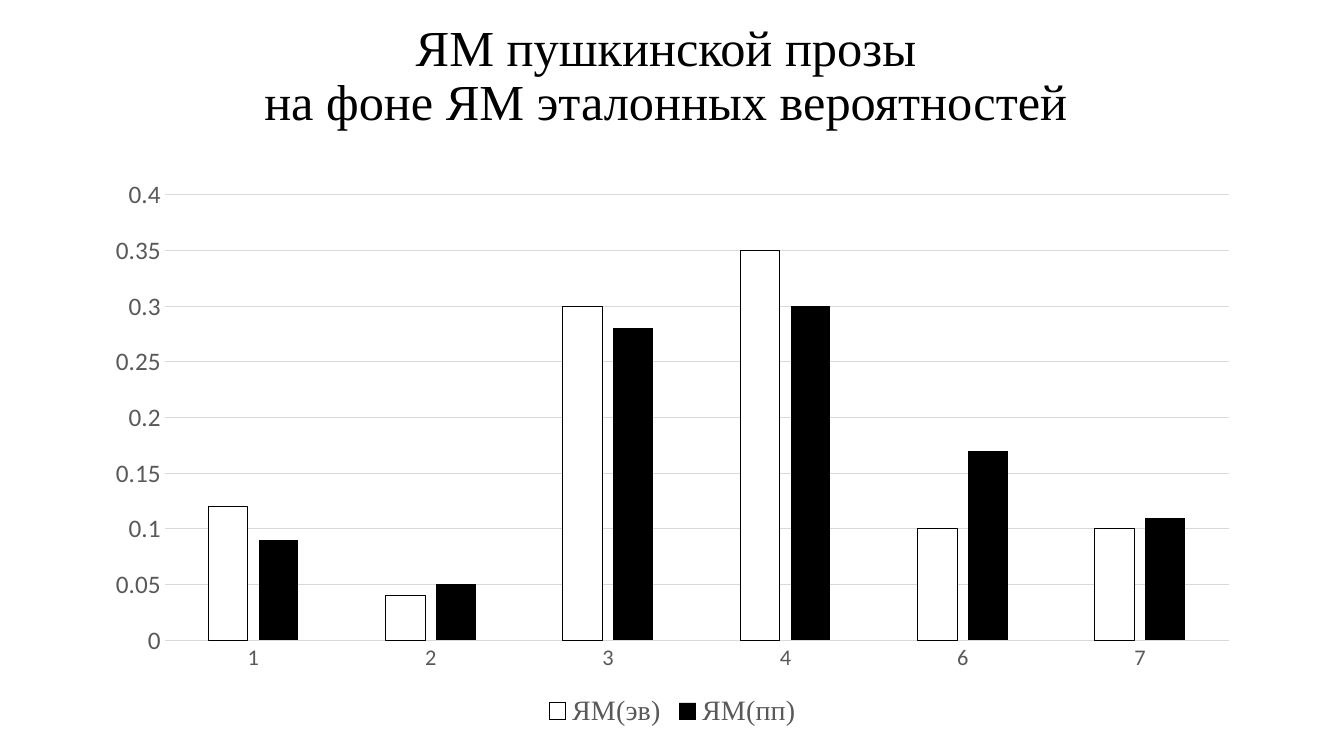
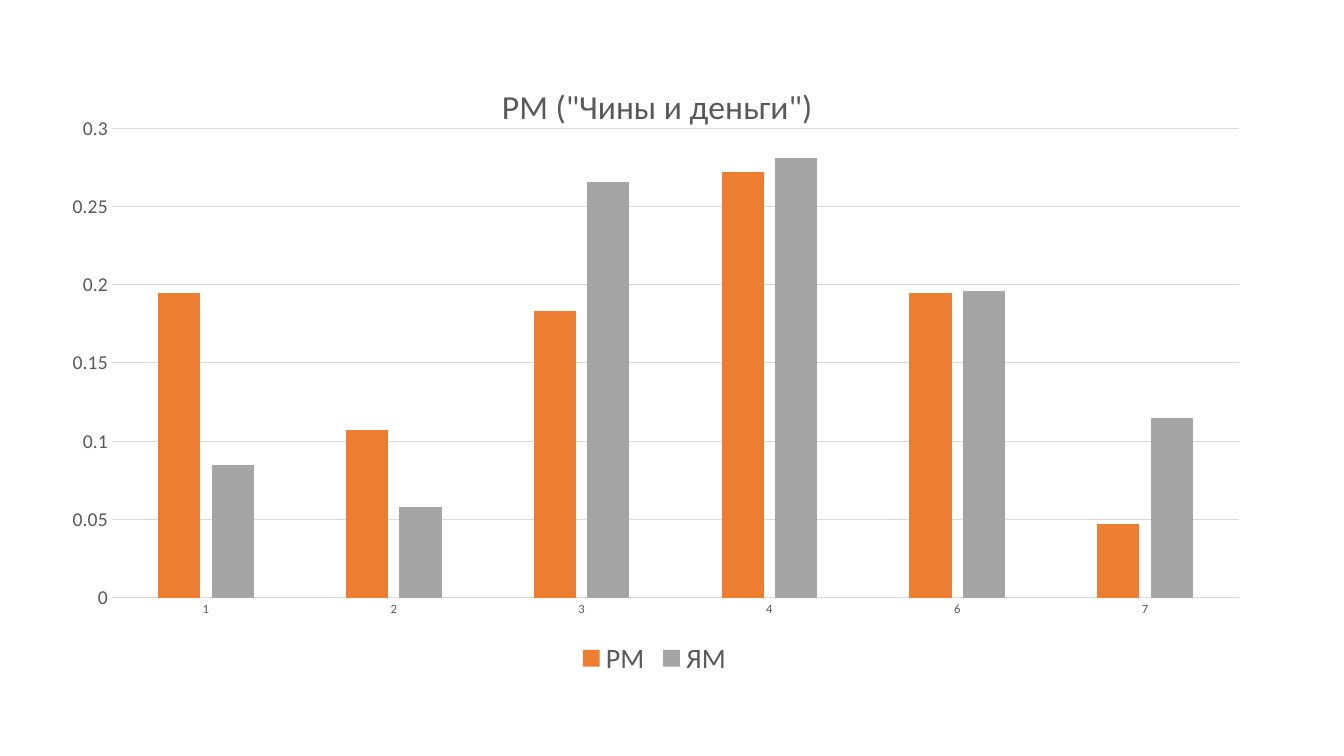
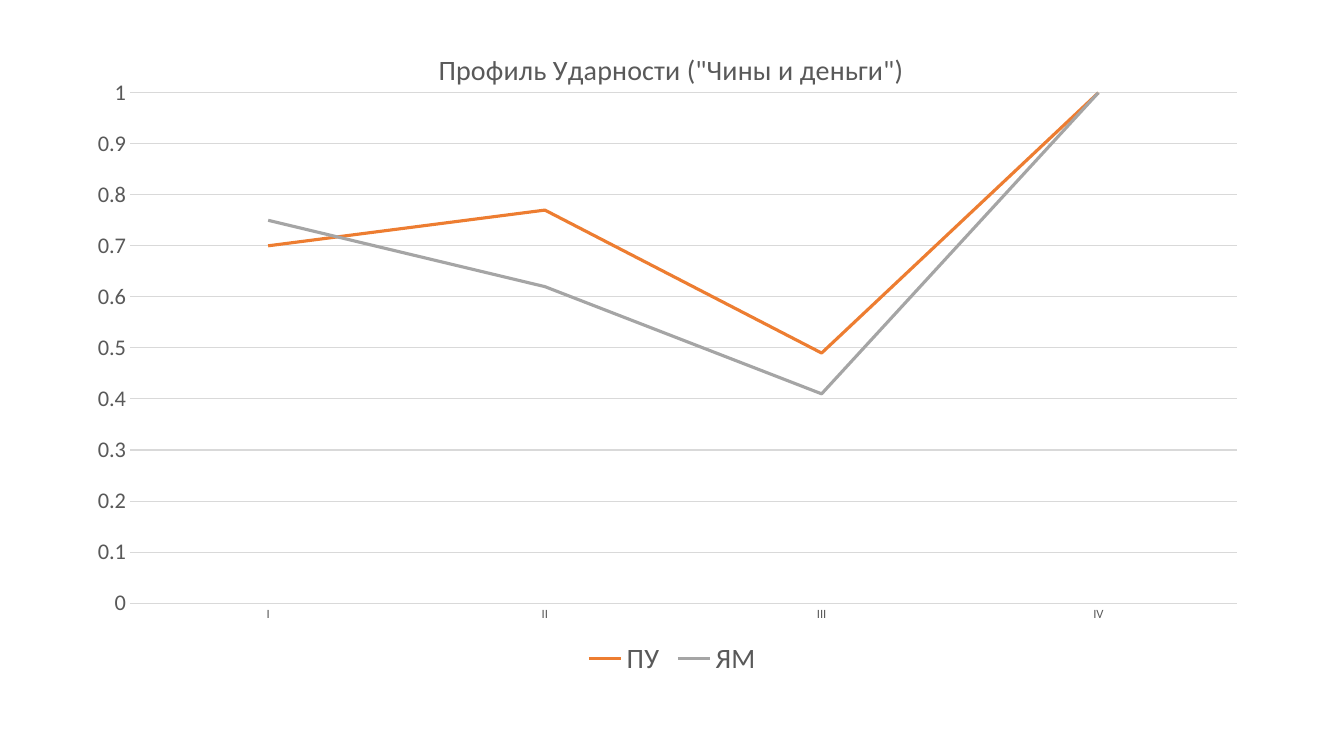
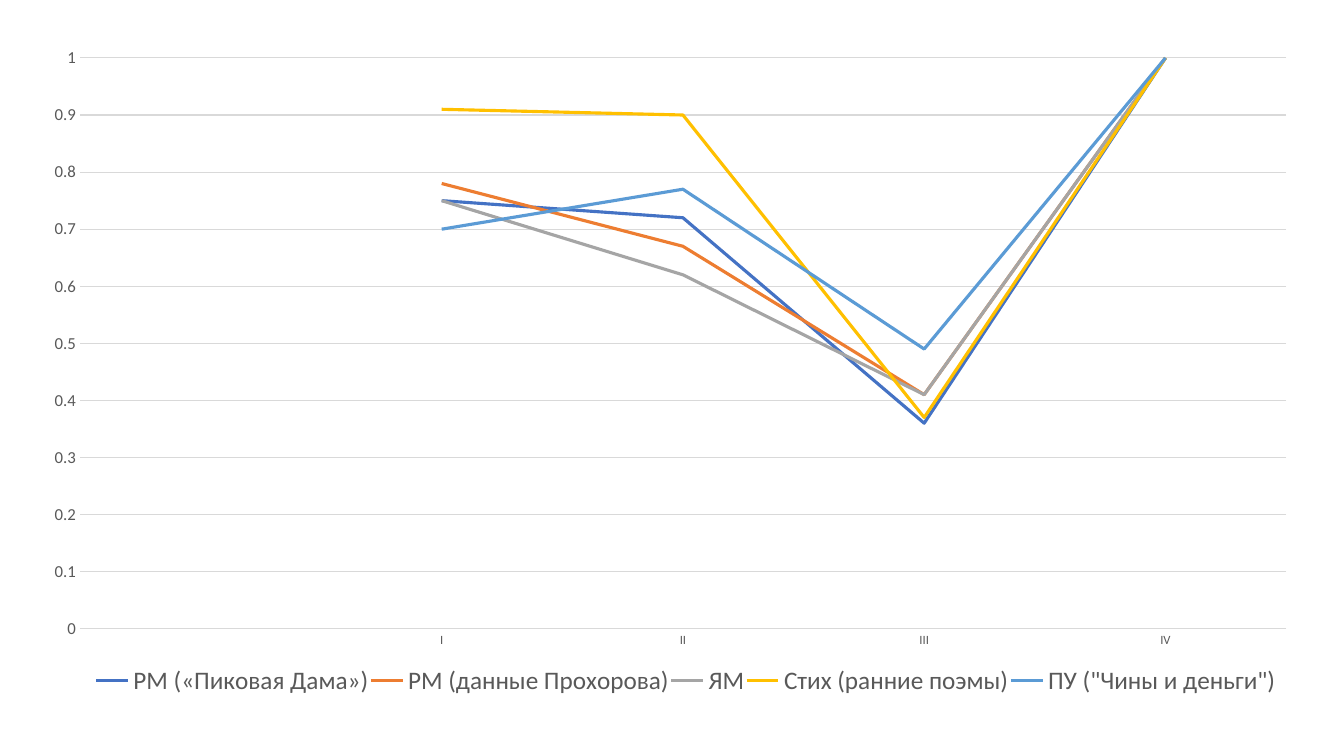
from dataclasses import dataclass
from typing import Any, Optional

from pptx import Presentation
from pptx import util as u
from pptx.chart.data import CategoryChartData
from pptx.dml.color import RGBColor
from pptx.enum import chart as charts, text
from pptx.oxml import parse_xml
from pptx.oxml.ns import nsdecls

# Shared look
BLACK, WHITE, GRAY_TEXT, GRID = "000000", "FFFFFF", "595959", "D9D9D9"
BLUE, ORANGE, GRAY, GOLD, SKY = "4472C4", "ED7D31", "A5A5A5", "FFC000", "5B9BD5"
SANS, SERIF = "Calibri", "Times New Roman"
COLUMNS = charts.XL_CHART_TYPE.COLUMN_CLUSTERED
LINES = charts.XL_CHART_TYPE.LINE
FEET = ["I", "II", "III", "IV"]
FORMS = ["1", "2", "3", "4", "6", "7"]
Box = tuple[float, float, float, float]


@dataclass
class Series:
    name: str
    values: list[Optional[float]]
    color: str
    outline: Optional[str] = None


@dataclass
class ChartTitle:
    """A title with its offset, in inches, from the corner of the chart."""
    text: str
    size: int
    left: float
    top: float


@dataclass
class ChartSlide:
    """One chart; plot is in fractions of the chart, legend_box in inches."""
    kind: Any
    box: Box
    categories: list[str]
    series: list[Series]
    maximum: float
    step: float
    category_size: int
    value_size: int
    legend_size: int
    legend_font: str = SANS
    plot: Optional[Box] = None
    legend_box: Optional[Box] = None
    chart_title: Optional[ChartTitle] = None
    heading: tuple[str, ...] = ()


CHART_SLIDES = [
    ChartSlide(
        COLUMNS, (0.92, 1.67, 11.5, 5.6), FORMS,
        [Series("ЯМ(эв)", [0.12, 0.04, 0.3, 0.35, 0.1, 0.1], WHITE, BLACK),
         Series("ЯМ(пп)", [0.09, 0.05, 0.28, 0.3, 0.17, 0.11], BLACK)],
        0.4, 0.05, 16, 18, 20, SERIF,
        heading=("ЯМ пушкинской прозы ", "на фоне ЯМ эталонных вероятностей ")),
    ChartSlide(
        COLUMNS, (0.64, 0.61, 11.77, 6.15), FORMS,
        [Series("РМ", [0.195, 0.107, 0.183, 0.272, 0.195, 0.047], ORANGE),
         Series("ЯМ ", [0.085, 0.058, 0.266, 0.281, 0.196, 0.115], GRAY)],
        0.3, 0.05, 9, 14, 20, plot=(0.04, 0.108, 0.95, 0.757),
        chart_title=ChartTitle('РМ ("Чины и деньги")', 24, 4.28, 0.16)),
    ChartSlide(
        LINES, (0.92, 0.3, 11.5, 6.46), FEET,
        [Series("ПУ", [0.7, 0.77, 0.49, 1], ORANGE),
         Series("ЯМ", [0.75, 0.62, 0.41, 1], GRAY)],
        1, 0.1, 9, 16, 20, plot=(0.032, 0.096, 0.955, 0.784),
        chart_title=ChartTitle('Профиль Ударности ("Чины и деньги")', 20, 3.38, 0.14)),
    ChartSlide(
        LINES, (0.43, 0.42, 12.48, 6.75), ["", *FEET],
        [Series("РМ («Пиковая Дама»)", [None, 0.75, 0.72, 0.36, 1], BLUE),
         Series("РМ (данные Прохорова)", [None, 0.78, 0.67, 0.41, 1], ORANGE),
         Series("ЯМ", [None, 0.75, 0.62, 0.41, 1], GRAY),
         Series("Стих (ранние поэмы)", [None, 0.91, 0.9, 0.37, 1], GOLD),
         Series('ПУ ("Чины и деньги")', [None, 0.7, 0.77, 0.49, 1], SKY)],
        1, 0.1, 9, 12, 18, plot=(0.029, 0.023, 0.959, 0.839),
        legend_box=(0.5, 6.13, 11.75, 0.41)),
]


# Formatting helpers
def rgb(color: str) -> RGBColor:
    return RGBColor.from_string(color)


def set_values(target: Any, values: dict[str, Any]) -> None:
    for name, value in values.items():
        setattr(target, name, value)


def style_font(font: Any, size: int, color: str = GRAY_TEXT, name: str = SANS) -> None:
    set_values(font, {"size": u.Pt(size), "name": name, "bold": False})
    font.color.rgb = rgb(color)


def style_line(line: Any, color: str, width: float = 0.75) -> None:
    line.color.rgb = rgb(color)
    line.width = u.Pt(width)


def manual_layout(fractions: tuple[float, ...], inner: bool = False) -> Any:
    target = '<c:layoutTarget val="inner"/>' if inner else ""
    modes = "".join(f'<c:{key}Mode val="edge"/>' for key in "xy")
    sizes = "".join(f'<c:{key} val="{value}"/>' for key, value in zip("xywh", fractions))
    return parse_xml(f'<c:layout {nsdecls("c")}><c:manualLayout>{target}{modes}{sizes}'
                     '</c:manualLayout></c:layout>')


def place_part(element: Any, layout: Any, before: str = "") -> None:
    """Put the layout after the named child, or first when none is named."""
    for old_layout in element.xpath("c:layout"):
        element.remove(old_layout)
    if before:
        element.xpath(before)[0].addnext(layout)
    else:
        element.insert(0, layout)


# Chart parts
def style_axes(chart: Any, item: ChartSlide) -> None:
    none = charts.XL_TICK_MARK.NONE
    axes = ((chart.category_axis, item.category_size), (chart.value_axis, item.value_size))
    for axis, size in axes:
        set_values(axis, {"major_tick_mark": none, "minor_tick_mark": none})
        style_font(axis.tick_labels.font, size)
    style_line(chart.category_axis.format.line, GRID)
    set_values(chart.value_axis, {
        "minimum_scale": 0, "maximum_scale": item.maximum,
        "major_unit": item.step, "has_major_gridlines": True})
    chart.value_axis.format.line.fill.background()
    style_line(chart.value_axis.major_gridlines.format.line, GRID)
    # Points stand in the middle of their categories
    for value_axis in chart.element.xpath("c:chart/c:plotArea/c:valAx"):
        if not value_axis.xpath("c:crossBetween"):
            value_axis.xpath("c:crosses")[0].addnext(
                parse_xml(f'<c:crossBetween {nsdecls("c")} val="between"/>'))


def style_series(chart: Any, item: ChartSlide) -> None:
    plot = chart.plots[0]
    plot.vary_by_categories = False
    if item.kind == COLUMNS:
        set_values(plot, {"gap_width": 219, "overlap": -27})
    for drawn, series in zip(plot.series, item.series):
        if item.kind == LINES:
            drawn.smooth = False
            drawn.marker.style = charts.XL_MARKER_STYLE.NONE
            style_line(drawn.format.line, series.color, 2.25)
            continue
        drawn.invert_if_negative = False
        drawn.format.fill.solid()
        drawn.format.fill.fore_color.rgb = rgb(series.color)
        if series.outline:
            style_line(drawn.format.line, series.outline)
        else:
            drawn.format.line.fill.background()


def add_chart_title(chart: Any, item: ChartSlide, title: ChartTitle) -> None:
    frame = chart.chart_title.text_frame
    frame.text = title.text
    style_font(frame.paragraphs[0].runs[0].font, title.size)
    width, height = item.box[2:]
    place_part(chart.element.xpath("c:chart/c:title")[0],
               manual_layout((title.left / width, title.top / height)), "c:tx")


def add_legend(chart: Any, item: ChartSlide) -> None:
    chart.has_legend = True
    set_values(chart.legend, {"position": charts.XL_LEGEND_POSITION.BOTTOM,
                              "include_in_layout": False})
    style_font(chart.legend.font, item.legend_size, name=item.legend_font)
    if item.legend_box:
        sizes = item.box[2:] * 2
        fractions = tuple(length / size for length, size in zip(item.legend_box, sizes))
        place_part(chart.element.xpath("c:chart/c:legend")[0],
                   manual_layout(fractions), "c:legendPos")


def add_chart(slide: Any, item: ChartSlide) -> None:
    data = CategoryChartData()
    data.categories = item.categories
    for series in item.series:
        data.add_series(series.name, series.values)
    box = [u.Inches(length) for length in item.box]
    chart = slide.shapes.add_chart(item.kind, *box, data).chart
    style_font(chart.font, 10, BLACK)
    chart.has_title = item.chart_title is not None
    add_legend(chart, item)
    style_axes(chart, item)
    style_series(chart, item)
    if item.chart_title:
        add_chart_title(chart, item, item.chart_title)
    if item.plot:
        place_part(chart.element.xpath("c:chart/c:plotArea")[0],
                   manual_layout(item.plot, inner=True))


# Slide heading
def add_heading(slide: Any, lines: tuple[str, ...]) -> None:
    box = [u.Inches(length) for length in (0.92, 0.04, 11.5, 1.45)]
    frame = slide.shapes.add_textbox(*box).text_frame
    set_values(frame, {"word_wrap": True, "vertical_anchor": text.MSO_ANCHOR.MIDDLE})
    paragraph = frame.paragraphs[0]
    set_values(paragraph, {"alignment": text.PP_ALIGN.CENTER, "line_spacing": 0.9})
    for index, line in enumerate(lines):
        if index:
            paragraph.add_line_break()
        run = paragraph.add_run()
        run.text = line
        style_font(run.font, 36, BLACK, SERIF)


def main() -> None:
    presentation = Presentation()
    set_values(presentation, {"slide_width": u.Inches(40 / 3), "slide_height": u.Inches(7.5)})
    for item in CHART_SLIDES:
        slide = presentation.slides.add_slide(presentation.slide_layouts[6])
        if item.heading:
            add_heading(slide, item.heading)
        add_chart(slide, item)
    presentation.save("out.pptx")


if __name__ == "__main__":
    main()
